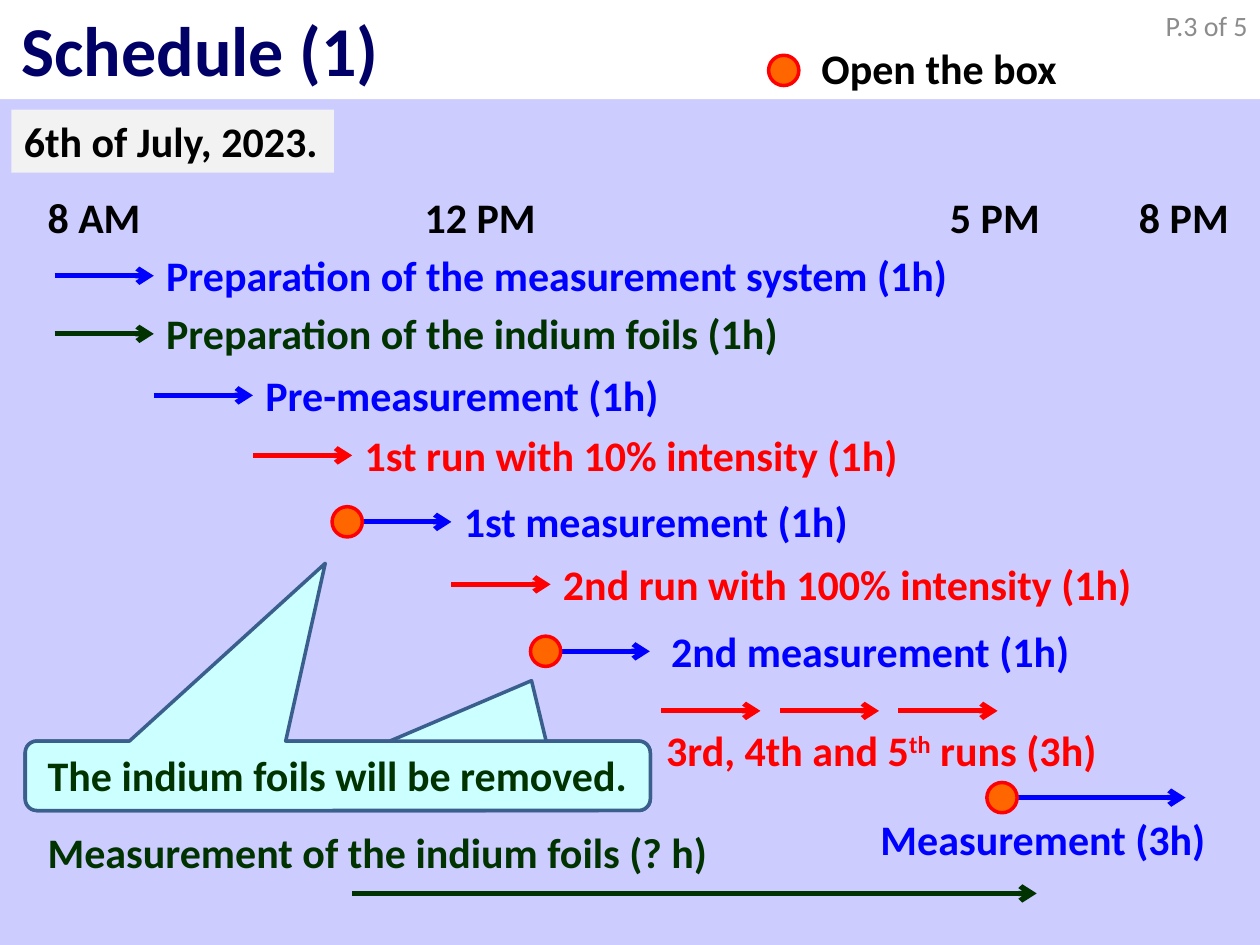
from dataclasses import dataclass

from pptx import Presentation
from pptx.dml.color import RGBColor
from pptx.enum.shapes import MSO_CONNECTOR, MSO_SHAPE
from pptx.enum.text import MSO_ANCHOR, MSO_AUTO_SIZE, PP_ALIGN
from pptx.oxml.ns import qn
from pptx.util import Cm, Pt
from lxml.etree import SubElement

HEX = {
    "back": "CCCCFF", "white": "FFFFFF", "black": "000000", "title": "000066",
    "date": "F2F2F2", "page": "8C8C8C", "blue": "0000FF", "green": "003300",
    "red": "FF0000", "dot": "FF6600", "note": "CCFFFF", "edge": "3A5F8C",
}
START, HOUR = 1.1, 2.0  # left end of the time axis and length of one hour
LIFT = 0.65             # label top above its arrow
DOT = 0.61
ROW = 1.27              # height of a one-line label


@dataclass
class Label:
    text: str
    left: float
    top: float
    width: float
    hue: str = "black"


@dataclass
class Arrow:
    left: float
    right: float
    y: float
    hue: str
    open: bool = False  # the box is opened at the start


@dataclass
class Task:
    """A one-hour job with its label right after the arrow."""
    slot: int
    y: float
    text: str
    width: float
    hue: str
    open: bool = False
    gap: float = 0


TIMES = [
    Label("8 AM", 0.71, 3.73, 2.41),
    Label("12 PM", 8.31, 3.73, 2.84),
    Label("5 PM", 18.9, 3.73, 2.34),
    Label("8 PM", 22.71, 3.73, 2.34),
]
TASKS = [
    Task(0, 5.56, "Preparation of the measurement system (1h)", 16.43, "blue"),
    Task(0, 6.73, "Preparation of the indium foils (1h)", 12.98, "green"),
    Task(1, 7.97, "Pre-measurement (1h)", 8.53, "blue"),
    Task(2, 9.18, "1st run with 10% intensity (1h)", 11.56, "red"),
    Task(3, 10.52, "1st measurement (1h)", 8.41, "blue", True),
    Task(4, 11.78, "2nd run with 100% intensity (1h)", 12.27, "red"),
    Task(5, 13.13, "2nd measurement (1h)", 8.61, "blue", True, 0.18),
]
ARROWS = [Arrow(x, x + HOUR, 14.33, "red") for x in (13.33, 15.72, 18.11)] + [
    Arrow(20.3, 23.9, 16.08, "blue", True),
    Arrow(START + 3 * HOUR, 20.9, 18.01, "green"),
]
LABELS = [
    Label("Measurement (3h)", 17.5, 16.28, 7.14, "blue"),
    Label("Measurement of the indium foils (? h)", 0.71, 16.54, 13.94, "green"),
]
RUNS = Label("3rd, 4th and 5", 13.18, 14.48, 9.32, "red")
NOTE = Label("The indium foils will be removed.", 0.71, 14.99, 12.29, "green")
KEY = Label("Open the box", 16.31, 0.74, 5.31)
DATE = Label("6th of July, 2023.", 0.23, 2.21, 6.5)


def rgb(hue: str) -> RGBColor:
    return RGBColor.from_string(HEX[hue])


def put_run(para, text: str, hue: str, size: int = 24, bold: bool = True):
    run = para.add_run()
    run.text = text
    font = run.font
    font.name, font.size, font.bold = "Calibri", Pt(size), bold
    font.color.rgb = rgb(hue)
    return run


def put_label(slide, item: Label):
    box = slide.shapes.add_textbox(
        Cm(item.left), Cm(item.top), Cm(item.width), Cm(ROW))
    frame = box.text_frame
    frame.word_wrap = False
    frame.auto_size = MSO_AUTO_SIZE.SHAPE_TO_FIT_TEXT
    put_run(frame.paragraphs[0], item.text, item.hue)
    return box


def put_shape(slide, kind, left: float, top: float, width: float, height: float,
              fill: str, line: str = ""):
    shape = slide.shapes.add_shape(kind, Cm(left), Cm(top), Cm(width), Cm(height))
    shape.shadow.inherit = False
    shape.fill.solid()
    shape.fill.fore_color.rgb = rgb(fill)
    if line:
        shape.line.color.rgb = rgb(line)
        shape.line.width = Pt(2)
    else:
        shape.line.fill.background()
    return shape


def put_dot(slide, x: float, y: float) -> None:
    """Mark a box opening, centred on x and y."""
    put_shape(slide, MSO_SHAPE.OVAL, x - DOT / 2, y - DOT / 2, DOT, DOT, "dot", "red")


def put_arrow(slide, item: Arrow) -> None:
    line = slide.shapes.add_connector(
        MSO_CONNECTOR.STRAIGHT, Cm(item.left), Cm(item.y), Cm(item.right), Cm(item.y))
    line.line.color.rgb = rgb(item.hue)
    line.line.width = Pt(3)
    SubElement(line.line._get_or_add_ln(), qn("a:tailEnd"), type="arrow")
    SubElement(line._element.spPr, qn("a:effectLst"))
    if item.open:
        put_dot(slide, item.left - 0.1, item.y)


def put_task(slide, task: Task) -> None:
    left = START + task.slot * HOUR
    end = left + HOUR
    put_arrow(slide, Arrow(left, end, task.y, task.hue, task.open))
    put_label(slide, Label(
        task.text, end + task.gap, task.y - LIFT, task.width, task.hue))


def put_note(slide, tip_x: float, tip_y: float) -> None:
    """Draw the callout; the tip is relative to its centre and size."""
    note = put_shape(slide, MSO_SHAPE.ROUNDED_RECTANGULAR_CALLOUT,
                     0.51, 14.94, 12.6, 1.4, "note", "edge")
    note.adjustments[0] = tip_x
    note.adjustments[1] = tip_y


def put_head(slide) -> None:
    put_shape(slide, MSO_SHAPE.RECTANGLE, 0, 0, 25.4, 2, "white")
    title = slide.shapes.title
    slide.shapes._spTree.append(title._element)  # above the white band
    title.left, title.top, title.width, title.height = Cm(0.18), Cm(0), Cm(7.8), Cm(1.96)
    frame = title.text_frame
    frame.word_wrap = False
    frame.auto_size = MSO_AUTO_SIZE.SHAPE_TO_FIT_TEXT
    frame.vertical_anchor = MSO_ANCHOR.MIDDLE
    para = frame.paragraphs[0]
    para.alignment = PP_ALIGN.LEFT
    put_run(para, "Schedule (1)", "title", 40)

    page = slide.shapes.add_textbox(Cm(19.48), Cm(0), Cm(5.92), Cm(1.02)).text_frame
    page.word_wrap = True
    page.vertical_anchor = MSO_ANCHOR.MIDDLE
    para = page.paragraphs[0]
    para.alignment = PP_ALIGN.RIGHT
    put_run(para, "P.3 of 5", "page", 16, False)


def main() -> None:
    deck = Presentation()
    deck.slide_width, deck.slide_height = Cm(25.4), Cm(19.05)
    slide = deck.slides.add_slide(deck.slide_layouts[5])
    slide.background.fill.solid()
    slide.background.fill.fore_color.rgb = rgb("back")

    put_note(slide, 0.31, -1.37)
    put_head(slide)
    date = put_label(slide, DATE)
    date.fill.solid()
    date.fill.fore_color.rgb = rgb("date")
    for task in TASKS:
        put_task(slide, task)
    for arrow in ARROWS:
        put_arrow(slide, arrow)
    para = put_label(slide, RUNS).text_frame.paragraphs[0]
    raised = put_run(para, "th", "red")
    raised.font._element.set("baseline", "30000")
    put_run(para, " runs (3h)", "red")
    put_note(slide, -0.02, -3.06)
    put_dot(slide, 15.8, 1.42)
    for item in TIMES + LABELS + [NOTE, KEY]:
        put_label(slide, item)
    deck.save("out.pptx")


if __name__ == "__main__":
    main()
